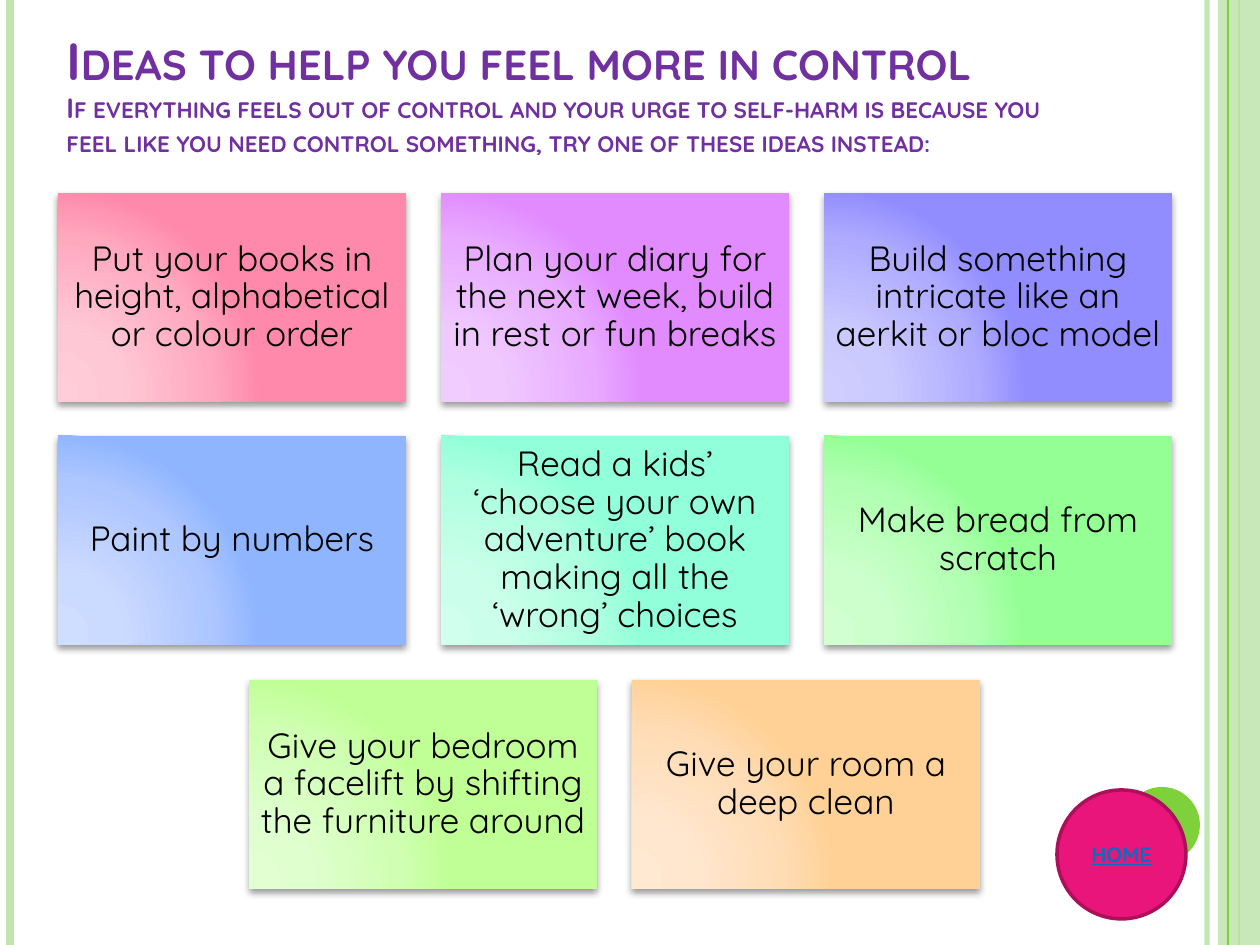
from dataclasses import dataclass

from lxml.etree import SubElement
from pptx import Presentation
from pptx.dml.color import RGBColor
from pptx.enum.shapes import MSO_CONNECTOR, MSO_SHAPE
from pptx.enum.text import MSO_ANCHOR, PP_ALIGN
from pptx.oxml import parse_xml
from pptx.oxml.ns import nsdecls, qn
from pptx.util import Emu, Pt

SCALE = 914400 / 126


@dataclass(frozen=True)
class Theme:
    face: str = "Quicksand"
    pale: str = "C0E5AF"
    leaf: str = "7FD13B"
    plum: str = "7030A0"
    ink: str = "000000"
    pink: str = "EA157A"
    rim: str = "AD105A"
    blue: str = "0070C0"
    head: int = 30
    sub: int = 16
    body: int = 20
    small: int = 12


def px(num):
    return Emu(round(num * SCALE))


def rgb(code):
    return RGBColor.from_string(code)


def apply(item, vals):
    for name, val in vals.items():
        setattr(item, name, val)


def fade(node, share):
    for tint in node.iter(qn("a:srgbClr")):
        SubElement(tint, qn("a:alpha"), val=str(share * 1000))


class Deck:
    def __init__(self, theme):
        self.theme = theme
        self.show = Presentation()
        apply(self.show, {"slide_width": px(1260), "slide_height": px(945)})
        self.slide = self.show.slides.add_slide(self.show.slide_layouts[6])

    def rule(self, left, color, width, share=100):
        line = self.slide.shapes.add_connector(
            MSO_CONNECTOR.STRAIGHT, px(left), 0, px(left), px(945))
        line.line.color.rgb = rgb(color)
        line.line.width = Pt(width)
        SubElement(line._element.spPr, qn("a:effectLst"))
        if share < 100:
            fade(line._element.spPr, share)

    def shape(self, kind, box, fill=None, edge=None, share=100):
        item = self.slide.shapes.add_shape(kind, *map(px, box))
        item.shadow.inherit = False
        if fill:
            item.fill.solid()
            item.fill.fore_color.rgb = rgb(fill)
        else:
            item.fill.background()
        if share < 100:
            fade(item._element.spPr, share)
        if edge:
            item.line.color.rgb = rgb(edge)
            item.line.width = Pt(2)
        else:
            item.line.fill.background()
        return item

    def frame(self, item, anchor, pad=None):
        vals = {"word_wrap": True, "vertical_anchor": anchor}
        if pad is not None:
            sides = ("left", "top", "right", "bottom")
            vals |= {f"margin_{side}": px(pad) for side in sides}
        apply(item.text_frame, vals)
        return item.text_frame.paragraphs[0]

    def run(self, para, text, size, color, caps=False, **more):
        run = para.add_run()
        run.text = text
        run.font.color.rgb = rgb(color)
        apply(run.font, {"name": self.theme.face, "size": Pt(size), **more})
        if caps:
            run._r.get_or_add_rPr().set("cap", "small")

    def title(self, box, head, sub):
        item = self.slide.shapes.add_textbox(*map(px, box))
        para = self.frame(item, MSO_ANCHOR.BOTTOM)
        look = {"color": self.theme.plum, "caps": True, "bold": True}
        self.run(para, head, self.theme.head, **look)
        para.add_line_break()
        self.run(para, sub, self.theme.sub, **look)

    def card(self, box, text, tints):
        item = self.shape(MSO_SHAPE.RECTANGLE, box)
        props = item._element.spPr
        stops = "".join(
            f'<a:gs pos="{pos}000"><a:srgbClr val="{tint}"/></a:gs>'
            for pos, tint in zip((0, 30, 75, 100), tints.split()))
        props.replace(props.find(qn("a:noFill")), parse_xml(
            f'<a:gradFill {nsdecls("a")} rotWithShape="1">'
            f'<a:gsLst>{stops}</a:gsLst><a:path path="circle">'
            '<a:fillToRect l="5000" t="100000" r="120000" b="10000"/>'
            '</a:path></a:gradFill>'))
        props.find(qn("a:effectLst")).append(parse_xml(
            f'<a:outerShdw {nsdecls("a")} blurRad="50800" dist="25400" '
            'dir="5400000" rotWithShape="0"><a:srgbClr val="000000">'
            '<a:alpha val="40000"/></a:srgbClr></a:outerShdw>'))
        para = self.frame(item, MSO_ANCHOR.MIDDLE, 10)
        apply(para, {"alignment": PP_ALIGN.CENTER, "line_spacing": 0.9})
        self.run(para, text, self.theme.body, self.theme.ink)

    def badge(self, box, text):
        theme = self.theme
        item = self.shape(MSO_SHAPE.OVAL, box, theme.pink, theme.rim)
        para = self.frame(item, MSO_ANCHOR.MIDDLE)
        para.alignment = PP_ALIGN.CENTER
        self.run(para, text, theme.small, theme.blue,
                 bold=True, underline=True)


CARDS = [
    ("Put your books in height, alphabetical or colour order",
     "FFCDD9 FFC8D5 FFA9BF FF89AA"),
    ("Plan your diary for the next week, build in rest or fun breaks",
     "F1CDFF EFC9FF E8ABFF E28BFF"),
    ("Build something intricate like an aerkit or bloc model",
     "D0CEFF CBCAFF AFACFF 918DFF"),
    ("Paint by numbers",
     "CFDDFF CBDAFF AEC7FF 8FB5FF"),
    ("Read a kids’ ‘choose your own adventure’ book making all the "
     "‘wrong’ choices",
     "D0FFED CCFFEB AFFFE1 91FFD9"),
    ("Make bread from scratch",
     "D1FFD2 CDFFCD B1FFB2 93FF94"),
    ("Give your bedroom a facelift by shifting the furniture around",
     "E2FFD2 DFFFCE CFFFB2 C0FF95"),
    ("Give your room a deep clean",
     "FFE9D3 FFE7CF FFDCB4 FFD196"),
]


def main():
    theme = Theme()
    deck = Deck(theme)
    deck.rule(1207, theme.pale, 3, 93)
    deck.rule(10, theme.pale, 4.5)
    deck.rule(1239, theme.leaf, 1.5)
    deck.shape(MSO_SHAPE.RECTANGLE, (1218, 0, 42, 945), theme.pale, share=87)
    deck.rule(1228, theme.leaf, 0.75)
    deck.shape(MSO_SHAPE.OVAL, (1124, 787, 76, 76), theme.leaf)
    deck.title(
        (54, 6, 1029, 158), "Ideas to help you feel more in control",
        "If everything feels out of control and your urge to self-harm is "
        "because you feel like you need control something, try one of these "
        "ideas instead:")
    for num, (text, tints) in enumerate(CARDS):
        row, col = divmod(num, 3)
        left = 58 + col * 383 + (191 if row == 2 else 0)
        deck.card((left, 193 + row * 487 // 2, 348, 209), text, tints)
    deck.badge((1057, 790, 129, 129), "HOME")
    deck.show.save("out.pptx")


if __name__ == "__main__":
    main()
